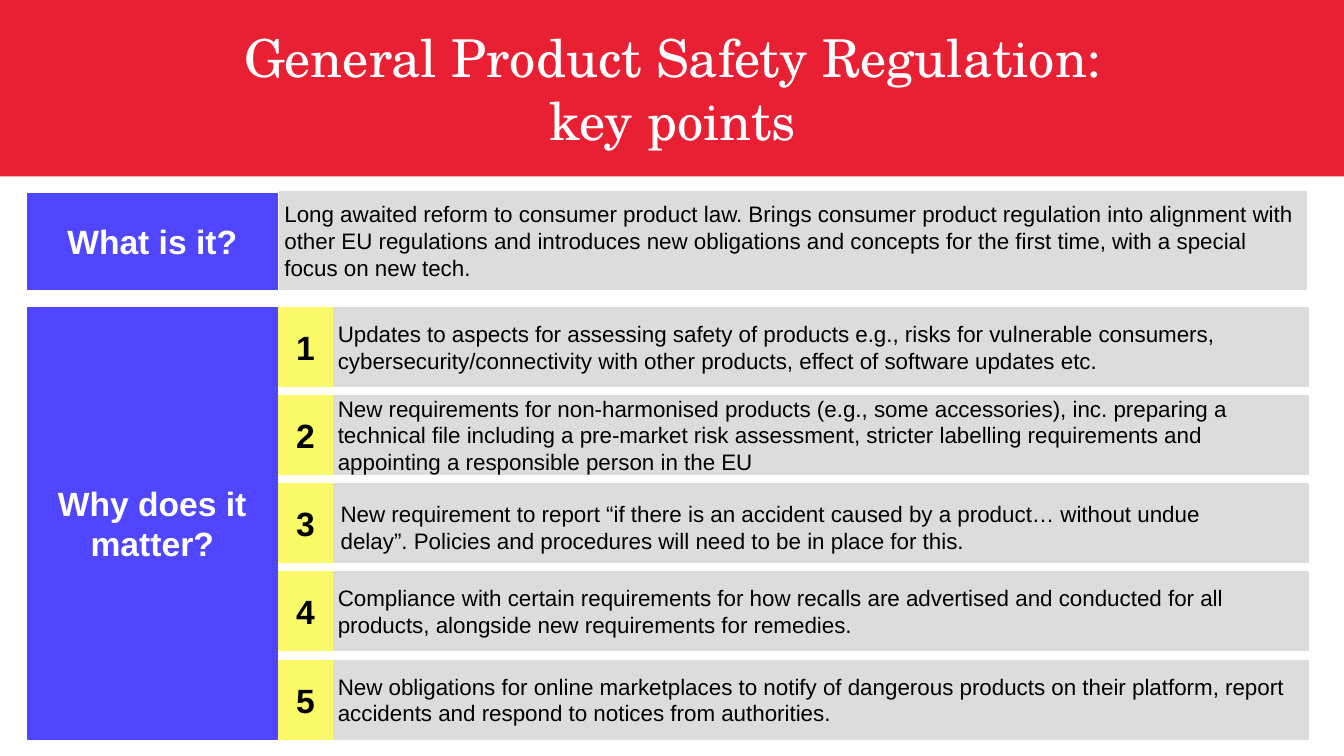
import pptx
import pptx.util
import pptx.dml.color
import pptx.enum.shapes
import pptx.enum.text

Inches = pptx.util.Inches
Pt = pptx.util.Pt
RGBColor = pptx.dml.color.RGBColor
ALIGN = pptx.enum.text.PP_ALIGN

RED = RGBColor(0xE9, 0x20, 0x33)
BLUE = RGBColor(0x50, 0x46, 0xFF)
YELLOW = RGBColor(0xFA, 0xFA, 0x69)
GREY = RGBColor(0xDC, 0xDC, 0xDC)
WHITE = RGBColor(0xFF, 0xFF, 0xFF)
BLACK = RGBColor(0, 0, 0)

TITLE_LINES = ["General Product Safety Regulation:", "key points"]
WHAT_IS_IT = (
    "Long awaited reform to consumer product law. Brings consumer product "
    "regulation into alignment with other EU regulations and introduces new "
    "obligations and concepts for the first time, with a special focus on new tech."
)
KEY_POINTS = [
    "Updates to aspects for assessing safety of products e.g., risks for vulnerable "
    "consumers, cybersecurity/connectivity with other products, effect of software "
    "updates etc.",
    "New requirements for non-harmonised products (e.g., some accessories), inc. "
    "preparing a technical file including a pre-market risk assessment, stricter "
    "labelling requirements and appointing a responsible person in the EU",
    "New requirement to report “if there is an accident caused by a product… without "
    "undue delay”. Policies and procedures will need to be in place for this.",
    "Compliance with certain requirements for how recalls are advertised and conducted "
    "for all products, alongside new requirements for remedies.",
    "New obligations for online marketplaces to notify of dangerous products on their "
    "platform, report accidents and respond to notices from authorities.",
]
REPORTING_POINT = 3  # its text sits in a narrower box of its own

POINTS_TOP, POINT_PITCH, POINT_HEIGHT = 3.05, 0.875, 0.78
NUMBER_LEFT, NUMBER_WIDTH = 2.76, 0.54
POINT_LEFT, POINT_WIDTH = 3.3, 9.68


def write(frame, lines, size, color, font="Arial", bold=False, align=ALIGN.LEFT):
    """Fill a frame with one paragraph, broken into the given lines."""
    frame.word_wrap = True
    paragraph = frame.paragraphs[0]
    paragraph.alignment = align
    for index, line in enumerate(lines):
        if index:
            paragraph.add_line_break()
        run = paragraph.add_run()
        run.text = line
        run.font.name = font
        run.font.size = Pt(size)
        run.font.bold = bold
        run.font.color.rgb = color


def add_block(slide, left, top, width, height, fill):
    block = slide.shapes.add_shape(
        pptx.enum.shapes.MSO_SHAPE.RECTANGLE,
        Inches(left), Inches(top), Inches(width), Inches(height))
    block.shadow.inherit = False
    block.fill.solid()
    block.fill.fore_color.rgb = fill
    block.line.color.rgb = fill
    block.line.width = Pt(1)
    frame = block.text_frame
    frame.vertical_anchor = pptx.enum.text.MSO_ANCHOR.MIDDLE
    frame.margin_left = frame.margin_right = Inches(0.05)
    frame.margin_top = frame.margin_bottom = Inches(0.05)
    return block


def add_label(slide, text, left, top, width, height, fill, color):
    label = add_block(slide, left, top, width, height, fill)
    write(label.text_frame, [text], 24, color, bold=True, align=ALIGN.CENTER)


def add_statement(slide, text, left, top, width, height):
    statement = add_block(slide, left, top, width, height, GREY)
    write(statement.text_frame, [text], 16, BLACK)


def add_text_box(slide, left, top, width, height):
    return slide.shapes.add_textbox(
        Inches(left), Inches(top), Inches(width), Inches(height)).text_frame


def add_header(slide):
    band = add_block(slide, 0, 0, 13.33, 1.75, RED)
    band.line.fill.background()
    title = add_text_box(slide, 0.67, 0.25, 12.01, 1.25)
    title.vertical_anchor = pptx.enum.text.MSO_ANCHOR.MIDDLE
    write(title, TITLE_LINES, 37.3, WHITE, font="TeX Gyre Schola", align=ALIGN.CENTER)


def add_key_point(slide, number, text):
    top = POINTS_TOP + (number - 1) * POINT_PITCH
    if number == REPORTING_POINT:
        add_block(slide, POINT_LEFT, top, POINT_WIDTH, POINT_HEIGHT, GREY)
        write(add_text_box(slide, 3.28, 4.91, 9.31, 0.64), [text], 16, BLACK)
    else:
        add_statement(slide, text, POINT_LEFT, top, POINT_WIDTH, POINT_HEIGHT)
    add_label(slide, str(number), NUMBER_LEFT, top, NUMBER_WIDTH, POINT_HEIGHT,
              YELLOW, BLACK)


def main():
    deck = pptx.Presentation()
    deck.slide_width = Inches(13.33)
    deck.slide_height = Inches(7.5)
    slide = deck.slides.add_slide(deck.slide_layouts[6])

    add_header(slide)
    add_label(slide, "What is it?", 0.27, 1.92, 2.48, 0.95, BLUE, WHITE)
    add_statement(slide, WHAT_IS_IT, 2.77, 1.9, 10.19, 0.97)
    add_label(slide, "Why does it matter?", 0.27, POINTS_TOP, 2.48, 4.28, BLUE, WHITE)
    for number, text in enumerate(KEY_POINTS, start=1):
        add_key_point(slide, number, text)

    deck.save("out.pptx")


if __name__ == "__main__":
    main()
